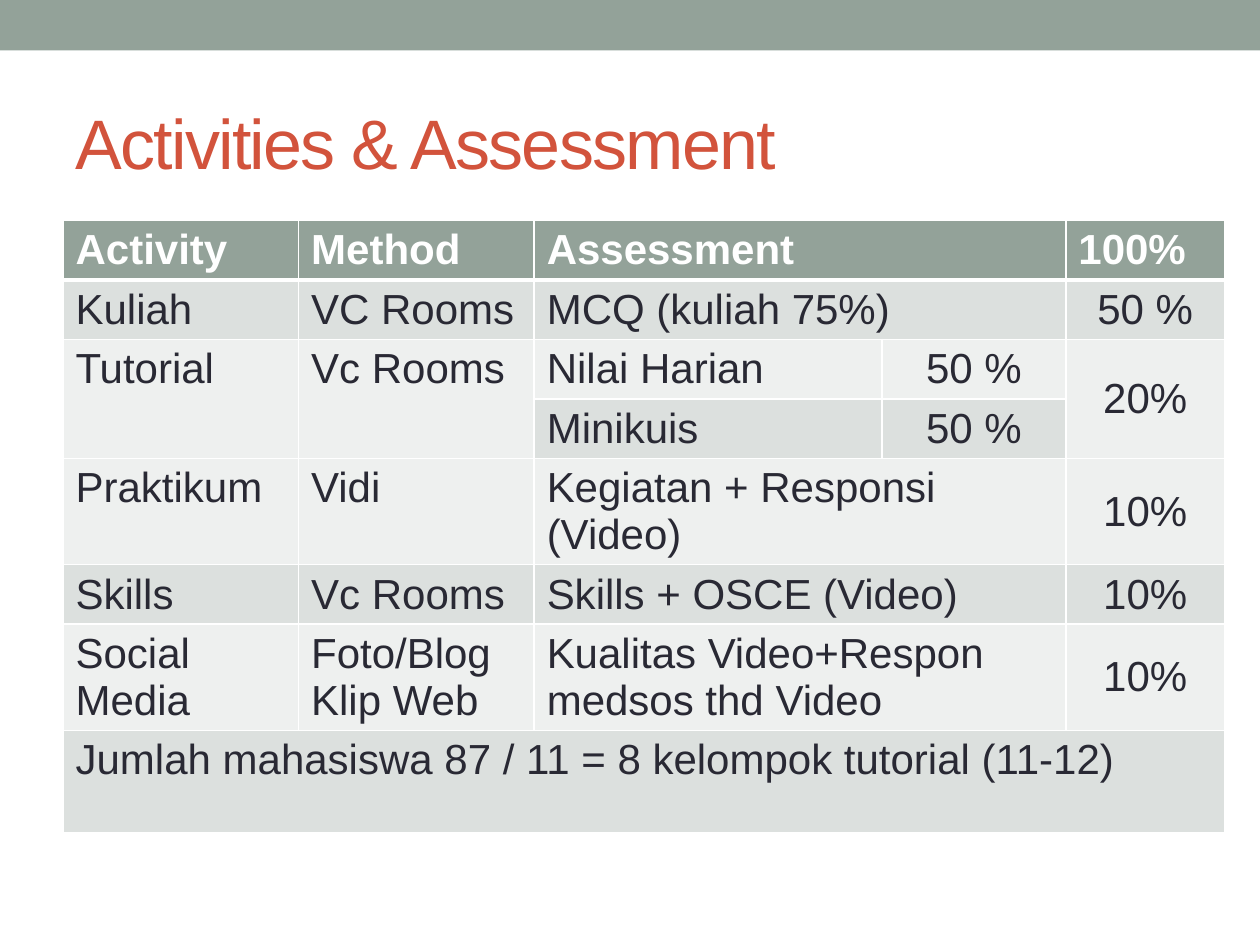
from lxml import etree
from pptx import Presentation
from pptx.dml.color import RGBColor
from pptx.enum.shapes import MSO_SHAPE
from pptx.enum.text import MSO_ANCHOR, PP_ALIGN
from pptx.oxml.ns import qn
from pptx.util import Inches, Pt

RECTANGLE = MSO_SHAPE.RECTANGLE
TOP, MIDDLE = MSO_ANCHOR.TOP, MSO_ANCHOR.MIDDLE
LEFT, CENTER = PP_ALIGN.LEFT, PP_ALIGN.CENTER
TITLE_ONLY = 5
COLORS = {"sage": "93A299", "title": "D2533C", "text": "292934",
          "white": "FFFFFF", "dark band": "DCE0DE", "light band": "EEF0EF"}


def color(name):
    return RGBColor.from_string(COLORS[name])


def add_borders(cell, top, bottom):
    """Draw white cell borders; top and bottom are widths in points."""
    properties = cell._tc.get_or_add_tcPr()
    for side, width in (("L", 1), ("R", 1), ("T", top), ("B", bottom)):
        line = etree.SubElement(properties, qn(f"a:ln{side}"), w=str(Pt(width)))
        fill = etree.SubElement(line, qn("a:solidFill"))
        etree.SubElement(fill, qn("a:srgbClr"), val=COLORS["white"])


presentation = Presentation()
presentation.slide_width, presentation.slide_height = Inches(10), Inches(7.5)
slide = presentation.slides.add_slide(presentation.slide_layouts[TITLE_ONLY])

band = slide.shapes.add_shape(RECTANGLE, 0, 0, Inches(10), Inches(0.4))
band.shadow.inherit = False
band.fill.solid()
band.fill.fore_color.rgb = color("sage")
band.line.fill.background()

title = slide.shapes.title
title.left, title.top = Inches(0.5), Inches(0.58)
title.width, title.height = Inches(9), Inches(1.08)
title.text_frame.text = "Activities & Assessment"
title.text_frame.vertical_anchor = MIDDLE
paragraph = title.text_frame.paragraphs[0]
paragraph.alignment = LEFT
run = paragraph.runs[0]
run.font.name, run.font.size = "Arial", Pt(40)
run.font.color.rgb = color("title")
run._r.get_or_add_rPr().set("spc", "-100")

# Empty strings are cells covered by a merged neighbour.
rows = [
    ("Activity", "Method", "Assessment", "", "100%"),
    ("Kuliah", "VC Rooms", "MCQ (kuliah 75%)", "", "50 %"),
    ("Tutorial", "Vc Rooms", "Nilai Harian", "50 %", "20%"),
    ("", "", "Minikuis", "50 %", ""),
    ("Praktikum", "Vidi", "Kegiatan + Responsi (Video)", "", "10%"),
    ("Skills", "Vc Rooms", "Skills + OSCE (Video)", "", "10%"),
    ("Social Media", "Foto/Blog\nKlip Web", "Kualitas Video+Respon medsos thd Video", "", "10%"),
    ("Jumlah mahasiswa 87 / 11 = 8 kelompok tutorial (11-12)", "", "", "", ""),
]
column_widths = [1.87, 1.87, 2.76, 1.46, 1.26]
row_heights = [0.47, 0.47, 0.47, 0.47, 0.84, 0.47, 0.84, 0.81]

table = slide.shapes.add_table(
    len(rows), len(column_widths), Inches(0.5), Inches(1.75),
    Inches(sum(column_widths)), Inches(sum(row_heights))).table
for column, width in zip(table.columns, column_widths):
    column.width = Inches(width)
for row, height in zip(table.rows, row_heights):
    row.height = Inches(height)

for row in (0, 1, 4, 5, 6):
    table.cell(row, 2).merge(table.cell(row, 3))
for column in (0, 1, 4):
    table.cell(2, column).merge(table.cell(3, column))
table.cell(7, 0).merge(table.cell(7, 4))

for row, texts in enumerate(rows):
    is_header = row == 0
    fill_name = "sage" if is_header else "dark band" if row % 2 else "light band"
    for column, text in enumerate(texts):
        cell = table.cell(row, column)
        add_borders(cell, 3 if row == 1 else 1, 3 if is_header else 1)
        cell.fill.solid()
        cell.fill.fore_color.rgb = color(fill_name)
        if not text:
            continue
        is_score = column >= 3 and not is_header
        cell.text_frame.text = text
        cell.vertical_anchor = MIDDLE if is_score else TOP
        for paragraph in cell.text_frame.paragraphs:
            paragraph.alignment = CENTER if is_score else LEFT
            font = paragraph.runs[0].font
            font.name, font.size, font.bold = "Arial", Pt(24), is_header
            font.color.rgb = color("white" if is_header else "text")

presentation.save("out.pptx")
